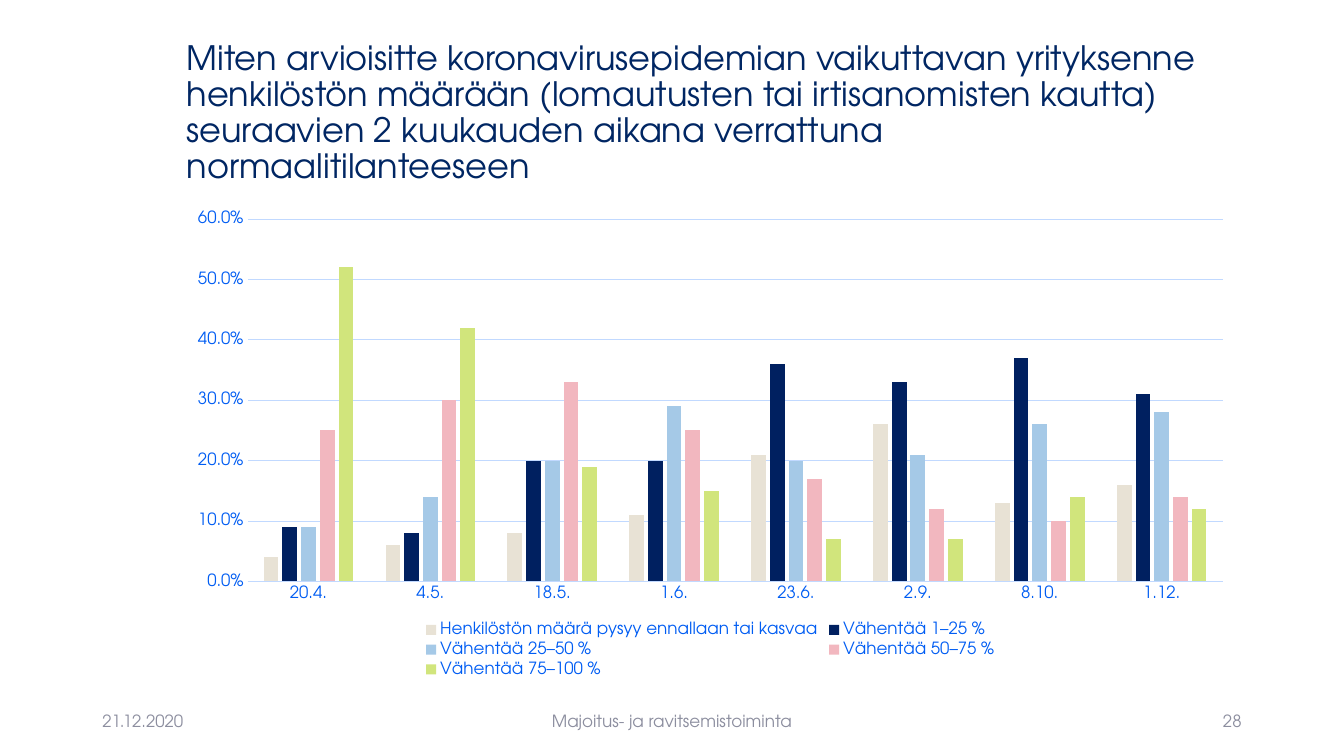
from pptx import Presentation
from pptx import util as u
from pptx.chart.data import CategoryChartData
from pptx.dml.color import RGBColor
from pptx.enum import chart as charts, text

NAVY = RGBColor(0x00, 0x26, 0x63)
BLUE = RGBColor(0x00, 0x5D, 0xF3)
PALE_BLUE = RGBColor(0xC1, 0xD9, 0xFF)
GREY = RGBColor(0x8C, 0x8E, 0x9F)
BAR_SAND = RGBColor(0xE8, 0xE2, 0xD5)
BAR_NAVY = RGBColor(0x00, 0x20, 0x60)
BAR_BLUE = RGBColor(0xA5, 0xC9, 0xE7)
BAR_PINK = RGBColor(0xF2, 0xB7, 0xBF)
BAR_LIME = RGBColor(0xD1, 0xE5, 0x7C)

TITLE = ("Miten arvioisitte koronavirusepidemian vaikuttavan yrityksenne "
         "henkilöstön määrään (lomautusten tai irtisanomisten kautta) "
         "seuraavien 2 kuukauden aikana verrattuna normaalitilanteeseen")
SURVEY_DATES = ["20.4.", "4.5.", "18.5.", "1.6.", "23.6.", "2.9.", "8.10.", "1.12."]
ANSWERS = [
    ("Henkilöstön määrä pysyy ennallaan tai kasvaa", BAR_SAND,
     [0.04, 0.06, 0.08, 0.11, 0.21, 0.26, 0.13, 0.16]),
    ("Vähentää 1–25 %", BAR_NAVY, [0.09, 0.08, 0.2, 0.2, 0.36, 0.33, 0.37, 0.31]),
    ("Vähentää 25–50 %", BAR_BLUE, [0.09, 0.14, 0.2, 0.29, 0.2, 0.21, 0.26, 0.28]),
    ("Vähentää 50–75 %", BAR_PINK, [0.25, 0.3, 0.33, 0.25, 0.17, 0.12, 0.1, 0.14]),
    ("Vähentää 75–100 %", BAR_LIME, [0.52, 0.42, 0.19, 0.15, 0.07, 0.07, 0.14, 0.12]),
]
LEFT, WIDTH = 4.45, 26.9
FOOTER_TOP, FOOTER_HEIGHT = 17.65, 1.02


class SurveySlide:
    """Holds the style and the current slide, and adds its elements."""

    font_name = "TeX Gyre Adventor"

    def __init__(self, presentation):
        """Add a title-only slide."""
        self.slide = presentation.slides.add_slide(presentation.slide_layouts[5])

    def style_font(self, font, size, color):
        """Apply the slide's typeface with a size and colour."""
        font.name = self.font_name
        font.size = u.Pt(size)
        font.color.rgb = color

    def fill_text(self, shape, content, size, color, alignment):
        """Put one middle-anchored paragraph into a shape."""
        frame = shape.text_frame
        frame.word_wrap = True
        frame.auto_size = text.MSO_AUTO_SIZE.NONE
        frame.vertical_anchor = text.MSO_ANCHOR.MIDDLE
        paragraph = frame.paragraphs[0]
        paragraph.alignment = alignment
        run = paragraph.add_run()
        run.text = content
        self.style_font(run.font, size, color)
        return paragraph

    def title(self, content, left, top, width, height):
        """Place and fill the title placeholder."""
        shape = self.slide.shapes.title
        shape.left, shape.top = u.Cm(left), u.Cm(top)
        shape.width, shape.height = u.Cm(width), u.Cm(height)
        paragraph = self.fill_text(shape, content, 24, NAVY, text.PP_ALIGN.LEFT)
        paragraph.line_spacing = 0.9

    def footer(self, content, left, width, alignment):
        """Add one part of the footer line."""
        shape = self.slide.shapes.add_textbox(
            u.Cm(left), u.Cm(FOOTER_TOP), u.Cm(width), u.Cm(FOOTER_HEIGHT))
        self.fill_text(shape, content, 12, GREY, alignment)

    def column_chart(self, categories, answers, left, top, width, height):
        """Add the clustered column chart of answers by survey date."""
        data = CategoryChartData(number_format="0.0%")
        data.categories = categories
        for name, _, values in answers:
            data.add_series(name, values)
        chart = self.slide.shapes.add_chart(
            charts.XL_CHART_TYPE.COLUMN_CLUSTERED,
            u.Cm(left), u.Cm(top), u.Cm(width), u.Cm(height), data).chart
        chart.has_title = False
        self.style_font(chart.font, 10, NAVY)

        plot = chart.plots[0]
        plot.gap_width, plot.overlap = 219, -27
        plot.vary_by_categories = False
        for series, (_, color, _) in zip(plot.series, answers):
            series.format.fill.solid()
            series.format.fill.fore_color.rgb = color
            series.invert_if_negative = False

        for axis in (chart.category_axis, chart.value_axis):
            axis.major_tick_mark = charts.XL_TICK_MARK.NONE
            axis.minor_tick_mark = charts.XL_TICK_MARK.NONE
            self.style_font(axis.tick_labels.font, 12, BLUE)
        value_axis = chart.value_axis
        value_axis.minimum_scale, value_axis.maximum_scale = 0, 0.6
        value_axis.major_unit = 0.1
        value_axis.tick_labels.number_format = "0.0%"
        value_axis.tick_labels.number_format_is_linked = False
        value_axis.format.line.fill.background()
        for line in (chart.category_axis.format.line,
                     value_axis.major_gridlines.format.line):
            line.color.rgb = PALE_BLUE
            line.width = u.Pt(0.75)

        chart.has_legend = True
        chart.legend.position = charts.XL_LEGEND_POSITION.BOTTOM
        chart.legend.include_in_layout = False
        self.style_font(chart.legend.font, 12, BLUE)


def main():
    """Build and save the presentation."""
    presentation = Presentation()
    presentation.slide_width = u.Cm(33.87)
    presentation.slide_height = u.Cm(19.05)
    survey = SurveySlide(presentation)
    survey.title(TITLE, LEFT, 1.02, WIDTH, 3.68)
    survey.column_chart(SURVEY_DATES, ANSWERS, LEFT, 5.08, WIDTH, 12.09)
    survey.footer("21.12.2020", 2.33, 7.62, text.PP_ALIGN.LEFT)
    survey.footer("Majoitus- ja ravitsemistoiminta", 11.22, 11.43, text.PP_ALIGN.CENTER)
    survey.footer("28", 23.92, 7.62, text.PP_ALIGN.RIGHT)
    presentation.save("out.pptx")


if __name__ == "__main__":
    main()
